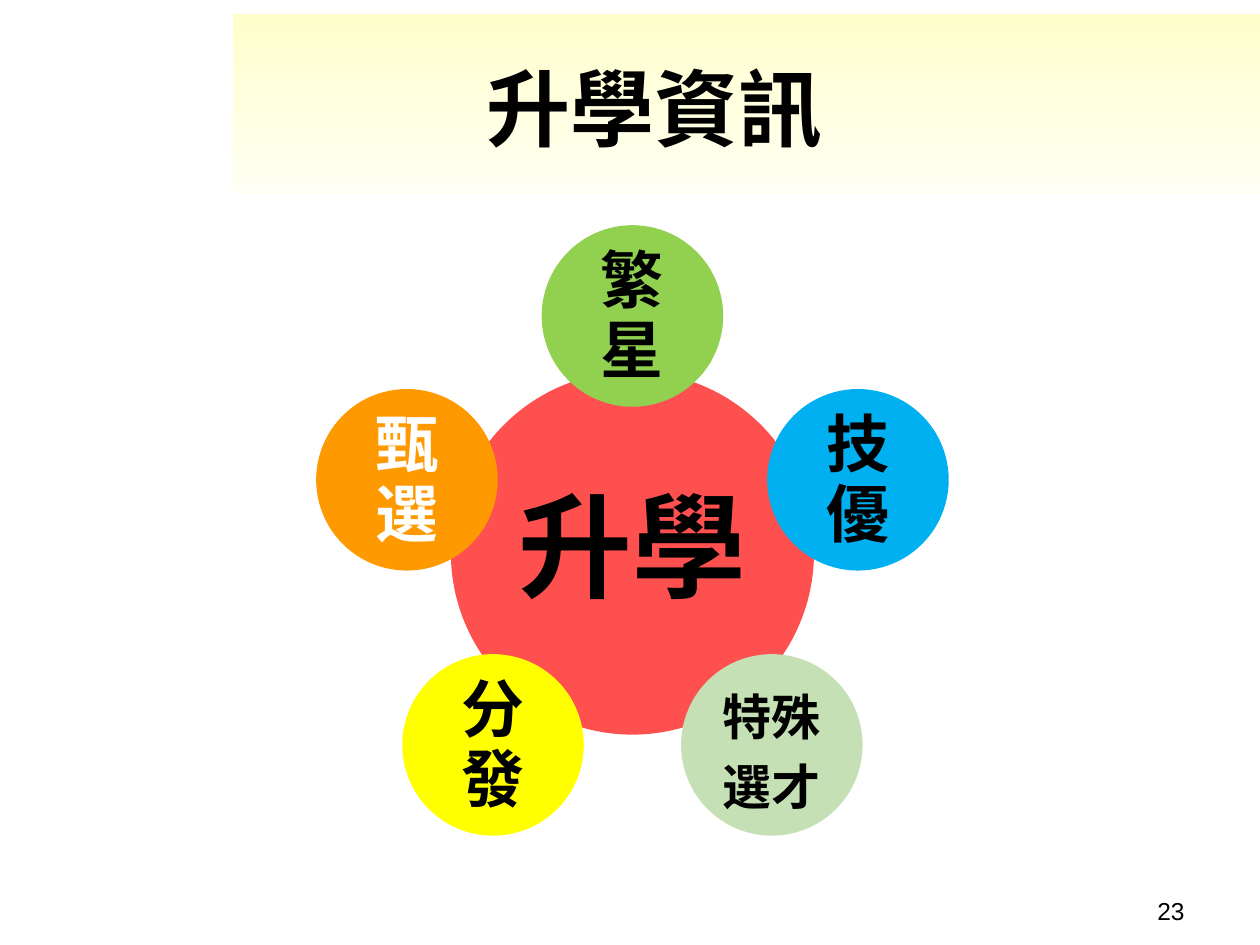
from math import cos, radians, sin

from lxml.etree import SubElement
from pptx import Presentation
from pptx.dml.color import RGBColor
from pptx.enum.shapes import MSO_SHAPE as Shape
from pptx.enum.text import MSO_ANCHOR as Anchor, PP_ALIGN as Align
from pptx.oxml.ns import qn
from pptx.util import Cm, Pt

BLACK = RGBColor(0x00, 0x00, 0x00)
WHITE = RGBColor(0xFF, 0xFF, 0xFF)
CREAM = RGBColor(0xFF, 0xFF, 0xCC)
PALE_CREAM = RGBColor(0xFF, 0xFF, 0xF3)
RED = RGBColor(0xFF, 0x50, 0x50)
GREEN = RGBColor(0x92, 0xD0, 0x50)
BLUE = RGBColor(0x00, 0xB0, 0xF0)
SAGE = RGBColor(0xC5, 0xE0, 0xB4)
YELLOW = RGBColor(0xFF, 0xFF, 0x00)
ORANGE = RGBColor(0xFF, 0x99, 0x00)

CHINESE_FONT = "Noto Sans CJK SC"
CENTER_X, CENTER_Y = 12.75, 11.15
HUB_DIAMETER, SATELLITE_DIAMETER = 7.32, 3.66
ORBIT_RADIUS = 4.78

# Clockwise from the top: text, fill, text colour, size, inset
SATELLITES = [
    ("繁星", GREEN, BLACK, 36, 0.13),
    ("技優", BLUE, BLACK, 36, 0.13),
    ("特殊選才", SAGE, BLACK, 28, 0.1),
    ("分發", YELLOW, BLACK, 36, 0.13),
    ("甄選", ORANGE, WHITE, 36, 0.13),
]


def set_attributes(target, formats):
    for name, value in formats.items():
        setattr(target, name, value)


def write_text(shape, text, size, color=BLACK, font_name=CHINESE_FONT,
               bold=True, frame_format=None, paragraph_format=None):
    frame = shape.text_frame
    set_attributes(frame, {"word_wrap": True,
                           "vertical_anchor": Anchor.MIDDLE,
                           **(frame_format or {})})
    paragraph = frame.paragraphs[0]
    set_attributes(paragraph, {"alignment": Align.CENTER,
                               **(paragraph_format or {})})
    run = paragraph.add_run()
    run.text = text
    set_attributes(run.font, {"size": Pt(size), "bold": bold,
                              "name": font_name})
    run.font.color.rgb = color
    east_asian = SubElement(run.font._element, qn("a:ea"))
    east_asian.set("typeface", font_name)


def add_banner(slide):
    banner = slide.shapes.add_shape(
        Shape.RECTANGLE, Cm(4.7), Cm(0.28), Cm(20.7), Cm(3.63))
    banner.shadow.inherit = False
    banner.line.fill.background()
    banner.fill.gradient()
    banner.fill.gradient_angle = 270
    for stop, color in zip(banner.fill.gradient_stops, (CREAM, PALE_CREAM)):
        stop.color.rgb = color


def add_text_box(slide, left, top, width, height, text, size, **formats):
    box = slide.shapes.add_textbox(Cm(left), Cm(top), Cm(width), Cm(height))
    write_text(box, text, size, **formats)


def add_circle(slide, center_x, center_y, diameter, fill, text, size, inset,
               color=BLACK, paragraph_format=None):
    circle = slide.shapes.add_shape(
        Shape.OVAL, Cm(center_x - diameter / 2), Cm(center_y - diameter / 2),
        Cm(diameter), Cm(diameter))
    circle.shadow.inherit = False
    circle.line.fill.background()
    circle.fill.solid()
    circle.fill.fore_color.rgb = fill
    margins = {f"margin_{side}": Cm(inset)
               for side in ("left", "top", "right", "bottom")}
    write_text(circle, text, size, color, frame_format=margins,
               paragraph_format=paragraph_format)


def add_satellites(slide):
    for index, (text, fill, color, size, inset) in enumerate(SATELLITES):
        angle = radians(index * 360 / len(SATELLITES) - 90)
        add_circle(slide, CENTER_X + ORBIT_RADIUS * cos(angle),
                   CENTER_Y + ORBIT_RADIUS * sin(angle), SATELLITE_DIAMETER,
                   fill, text, size, inset, color, {"line_spacing": Pt(40)})


def main():
    presentation = Presentation()
    set_attributes(presentation, {"slide_width": Cm(25.4),
                                  "slide_height": Cm(19.05)})
    slide = presentation.slides.add_slide(presentation.slide_layouts[6])

    add_banner(slide)
    add_text_box(slide, 4.7, 0.97, 17, 2.36, "升學資訊", 48)
    add_text_box(slide, 18.2, 17.93, 5.93, 1, "23", 14,
                 font_name="Arial", bold=False,
                 frame_format={"vertical_anchor": Anchor.TOP},
                 paragraph_format={"alignment": Align.RIGHT})
    add_circle(slide, CENTER_X, CENTER_Y, HUB_DIAMETER, RED, "升學", 65, 0.23,
               paragraph_format={"line_spacing": 0.9, "space_after": Pt(23)})
    add_satellites(slide)

    presentation.save("out.pptx")


if __name__ == "__main__":
    main()
